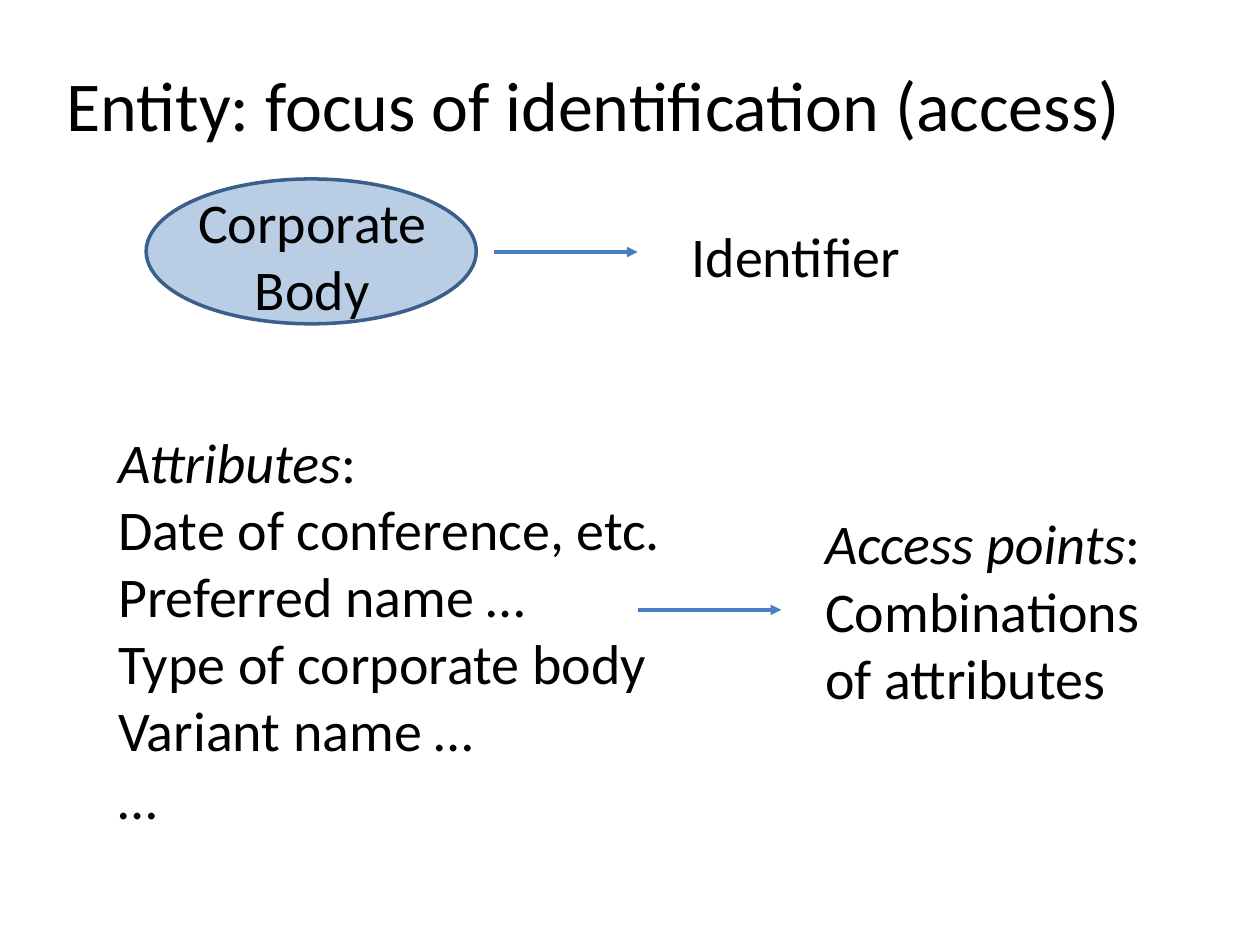
from lxml.etree import SubElement
from pptx import Presentation
from pptx.dml.color import RGBColor
from pptx.enum.shapes import MSO_CONNECTOR, MSO_SHAPE
from pptx.enum.text import MSO_AUTO_SIZE, PP_ALIGN
from pptx.oxml.ns import qn
from pptx.util import Inches, Pt

# Content
FONT = "Calibri"
COLORS = {"text": "000000", "fill": "B9CDE5", "outline": "3A5F8C", "arrow": "4B7EBC"}
LINE_WIDTH = 2
BODY = {"size": 32}
CENTERED = {"size": 32, "wrap": True, "margin": 0, "align": PP_ALIGN.CENTER}

ENTITY = (1.16, 1.42, 2.62, 1.15)
# Each box: position, paragraphs of (text, italic) runs, format
TEXTS = [
    ((0.43, 0.44, 8.66, 0.77),
     [[("Entity: focus of identification (access)", False)]], {"size": 40}),
    ((0.84, 3.34, 4.54, 3.33),
     [[("Attributes", True), (":", False)],
      [("Date of conference, etc.", False)],
      [("Preferred name …", False)],
      [("Type of corporate body", False)],
      [("Variant name …", False)],
      [("…", False)]], BODY),
    ((6.45, 3.99, 2.73, 1.72),
     [[("Access points", True), (":", False)],
      [("Combinations", False)],
      [("of attributes", False)]], BODY),
    ((1.43, 1.49, 2.1, 1.08), [[("Corporate Body", False)]], CENTERED),
    ((5.39, 1.71, 1.88, 0.64), [[("Identifier", False)]], BODY),
]
ARROW_LENGTH = 1.14
ARROWS = [(3.92, 2), (5.06, 4.84)]


def color(name):
    return RGBColor.from_string(COLORS[name])


def add_text(slide, box, paragraphs, size, wrap=False, margin=None, align=PP_ALIGN.LEFT):
    tf = slide.shapes.add_textbox(*map(Inches, box)).text_frame
    tf.word_wrap = wrap
    tf.auto_size = MSO_AUTO_SIZE.SHAPE_TO_FIT_TEXT
    if margin is not None:
        for side in ("left", "top", "right", "bottom"):
            setattr(tf, f"margin_{side}", Inches(margin))
    for i, runs in enumerate(paragraphs):
        p = tf.add_paragraph() if i else tf.paragraphs[0]
        p.alignment = align
        for text, italic in runs:
            r = p.add_run()
            r.text = text
            for key, value in {"name": FONT, "size": Pt(size), "italic": italic}.items():
                setattr(r.font, key, value)
            r.font.color.rgb = color("text")


def set_line(line, name):
    line.color.rgb = color(name)
    line.width = Pt(LINE_WIDTH)


def add_arrow(slide, x, y):
    ends = map(Inches, (x, y, x + ARROW_LENGTH, y))
    s = slide.shapes.add_connector(MSO_CONNECTOR.STRAIGHT, *ends)
    set_line(s.line, "arrow")
    SubElement(s.line._get_or_add_ln(), qn("a:tailEnd"), type="triangle")
    SubElement(s._element.spPr, qn("a:effectLst"))


prs = Presentation()
prs.slide_width, prs.slide_height = Inches(10), Inches(7.5)
slide = prs.slides.add_slide(prs.slide_layouts[6])

# Entity ellipse
sp = slide.shapes.add_shape(MSO_SHAPE.OVAL, *map(Inches, ENTITY))
sp.shadow.inherit = False
sp.fill.solid()
sp.fill.fore_color.rgb = color("fill")
set_line(sp.line, "outline")

# Text and arrows
for box, paragraphs, fmt in TEXTS:
    add_text(slide, box, paragraphs, **fmt)
for x, y in ARROWS:
    add_arrow(slide, x, y)

prs.save("out.pptx")
